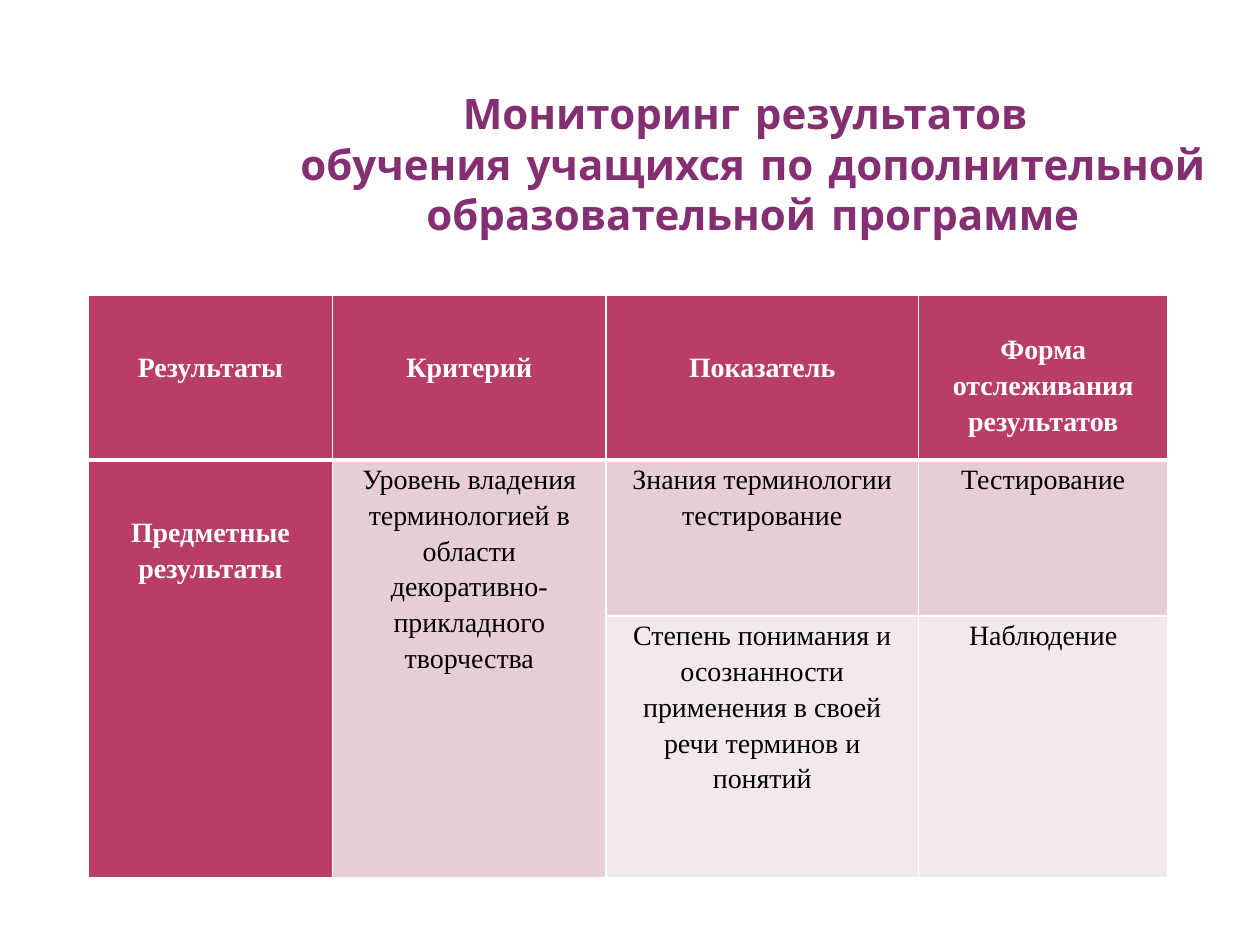
from dataclasses import dataclass

from lxml import etree
from pptx import Presentation
from pptx.dml.color import RGBColor
from pptx.enum.text import MSO_ANCHOR, PP_ALIGN
from pptx.oxml.ns import qn
from pptx.util import Inches, Pt

CENTER = PP_ALIGN.CENTER
MIDDLE = MSO_ANCHOR.MIDDLE


@dataclass(frozen=True)
class Theme:
    title: str = "852F73"
    head: str = "B83D68"
    band: str = "E6CED4"
    pale: str = "F3E8EB"
    white: str = "FFFFFF"
    black: str = "000000"
    title_font: str = "Comic Neue"
    cell_font: str = "Times New Roman"
    title_size: int = 24
    cell_size: int = 16
    thin: int = 1
    thick: int = 3


THEME = Theme()
COLS = (1.94, 2.17, 2.48, 1.98)
ROWS = (1.31, 1.24, 2.08)
DROP = 0.42  # top inset of the bold labels
LIFT = 0.28  # top inset of the three-line label

HEADS = (
    ("Результаты", DROP, 10),
    ("Критерий", DROP, 10),
    ("Показатель", DROP, 10),
    ("Форма отслеживания\nрезультатов", LIFT, 0),
)
LABEL = "Предметные результаты"
BODY = (
    (1, 1, "Уровень владения терминологией в области декоративно- "
           "прикладного творчества"),
    (1, 2, "Знания терминологии тестирование"),
    (1, 3, "Тестирование"),
    (2, 2, "Степень понимания и осознанности применения в своей речи "
           "терминов и понятий"),
    (2, 3, "Наблюдение"),
)


def write(frame, text, face, size, color, bold):
    frame.text = text
    for para in frame.paragraphs:
        para.alignment = CENTER
        font = para.font
        font.name, font.size, font.bold = face, Pt(size), bold
        font.color.rgb = RGBColor.from_string(color)


def add_title(slide, text):
    box = slide.shapes.add_textbox(
        Inches(1.95), Inches(0.64), Inches(8.05), Inches(1.31))
    frame = box.text_frame
    frame.word_wrap = True
    frame.vertical_anchor = MIDDLE
    write(frame, text, THEME.title_font, THEME.title_size, THEME.title, True)


def add_edges(cell, top, bottom):
    """Draw white borders; widths of the top and bottom are in points."""
    props = cell._tc.get_or_add_tcPr()
    sides = {"L": THEME.thin, "R": THEME.thin, "T": top, "B": bottom}
    for spot, (side, width) in enumerate(sides.items()):
        line = etree.Element(qn("a:ln" + side), w=str(Pt(width)))
        fill = etree.SubElement(line, qn("a:solidFill"))
        etree.SubElement(fill, qn("a:srgbClr"), val=THEME.white)
        props.insert(spot, line)


def paint(cell, row, col):
    if row == 0 or col == 0:
        color = THEME.head
    elif row == 1 or col == 1:
        color = THEME.band
    else:
        color = THEME.pale
    cell.fill.solid()
    cell.fill.fore_color.rgb = RGBColor.from_string(color)
    add_edges(cell,
              THEME.thick if row == 1 else THEME.thin,
              THEME.thick if row == 0 else THEME.thin)


def fill_cell(cell, text, color, bold=False, top=0, after=10):
    cell.margin_left = cell.margin_right = Inches(0.07)
    cell.margin_top, cell.margin_bottom = Inches(top), 0
    write(cell.text_frame, text, THEME.cell_font, THEME.cell_size, color, bold)
    for para in cell.text_frame.paragraphs:
        para.line_spacing = 1.15
        para.space_after = Pt(after)


def add_grid(slide):
    grid = slide.shapes.add_table(
        len(ROWS), len(COLS), Inches(0.7), Inches(2.34),
        Inches(sum(COLS)), Inches(sum(ROWS))).table
    for col, width in zip(grid.columns, COLS):
        col.width = Inches(width)
    for row, height in zip(grid.rows, ROWS):
        row.height = Inches(height)
    for row in range(len(ROWS)):
        for col in range(len(COLS)):
            paint(grid.cell(row, col), row, col)
    for col in (0, 1):
        grid.cell(1, col).merge(grid.cell(2, col))

    for col, (text, top, after) in enumerate(HEADS):
        fill_cell(grid.cell(0, col), text, THEME.white, True, top, after)
    fill_cell(grid.cell(1, 0), LABEL, THEME.white, True, DROP)
    for row, col, text in BODY:
        fill_cell(grid.cell(row, col), text, THEME.black)


def main():
    deck = Presentation()
    deck.slide_width, deck.slide_height = Inches(10), Inches(7.5)
    slide = deck.slides.add_slide(deck.slide_layouts[6])
    add_title(slide, "Мониторинг результатов \nобучения учащихся по "
                     "дополнительной образовательной программе")
    add_grid(slide)
    deck.save("out.pptx")


if __name__ == "__main__":
    main()
